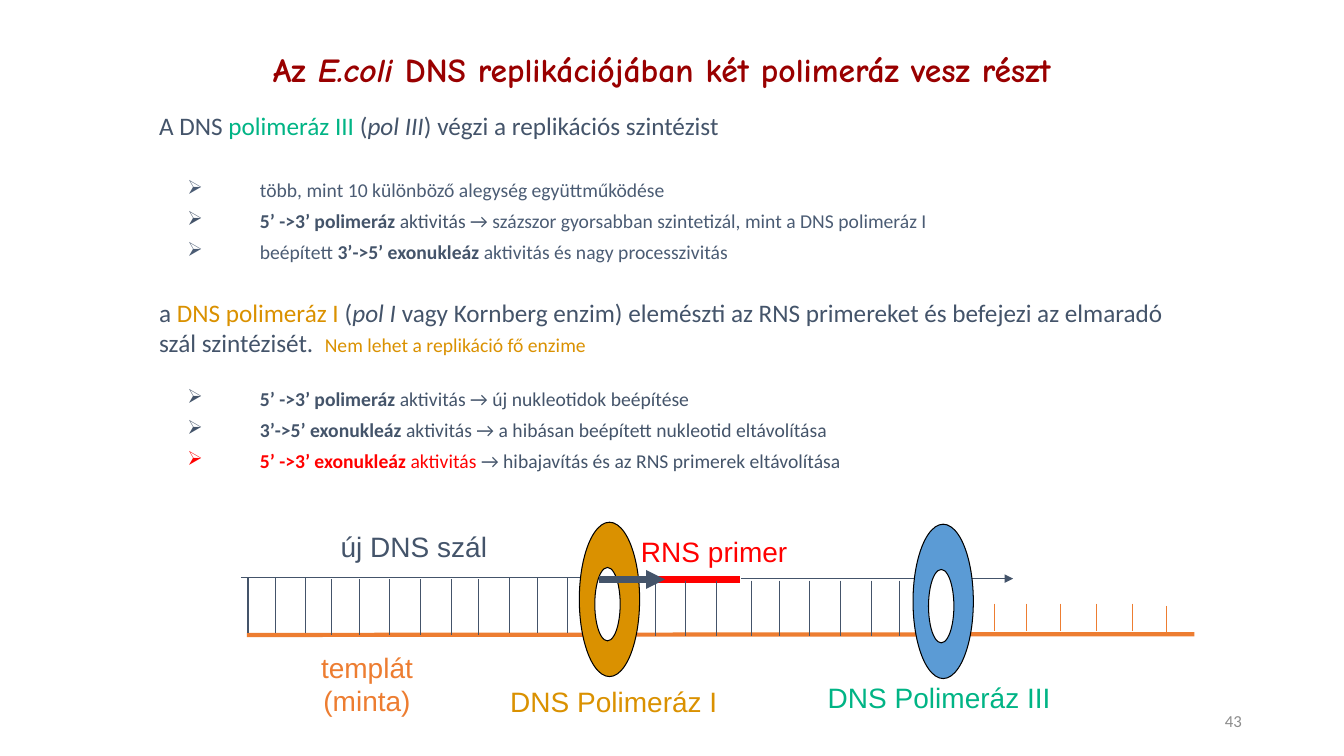
import pptx
import pptx.util
import pptx.dml.color
import pptx.enum.shapes
import pptx.enum.text
import pptx.oxml.ns
from lxml import etree

Cm = pptx.util.Cm
Pt = pptx.util.Pt
ALIGN = pptx.enum.text.PP_ALIGN
ANCHOR = pptx.enum.text.MSO_ANCHOR

COLORS = {
    "slate": "44546A", "steel": "4B5C74", "green": "00B485", "gold": "DA9100",
    "red": "FF0000", "orange": "ED7D31", "blue": "5B9BD5", "maroon": "990000",
    "gray": "8C8C8C", "black": "000000", "white": "FFFFFF",
}

# Content: a run is (text, color, font attributes), a paragraph is (kind, space before, runs)
BOLD, ITALIC = {"bold": True}, {"italic": True}
SMALL = {"size": Pt(14)}
TITLE = [("plain", 0, [
    ("Az ", "maroon", {}),
    ("E.coli", "maroon", ITALIC),
    (" DNS replikációjában két polimeráz vesz részt ", "maroon", {}),
])]
BODY = [
    ("plain", 0, [
        ("A DNS ", "slate", {}),
        ("polimeráz III", "green", {}),
        (" (", "slate", {}),
        ("pol III", "slate", ITALIC),
        (") végzi a replikációs szintézist", "slate", {}),
    ]),
    ("bullet", 22, [("több, mint 10 különböző alegység együttműködése", "steel", {})]),
    ("bullet", 0, [
        ("5’ ->3’ polimeráz ", "slate", BOLD),
        ("aktivitás →", "slate", {}),
        (" százszor gyorsabban szintetizál, mint a DNS polimeráz I", "steel", {}),
    ]),
    ("bullet", 0, [
        ("beépített ", "steel", {}),
        ("3’->5’ exonukleáz ", "slate", BOLD),
        ("aktivitás és nagy processzivitás", "steel", {}),
    ]),
    ("plain", 24, [
        ("a ", "slate", {}),
        ("DNS polimeráz I ", "gold", {}),
        ("(", "slate", {}),
        ("pol I", "slate", ITALIC),
        (" vagy Kornberg enzim) elemészti az RNS primereket és befejezi "
         "az elmaradó szál szintézisét.  ", "slate", {}),
        ("Nem lehet a replikáció fő enzime", "gold", SMALL),
    ]),
    ("bullet", 16, [
        ("5’ ->3’ polimeráz ", "slate", BOLD),
        ("aktivitás → új nukleotidok beépítése", "slate", {}),
    ]),
    ("bullet", 0, [
        ("3’->5’ exonukleáz ", "slate", BOLD),
        ("aktivitás → a hibásan beépített nukleotid eltávolítása", "slate", {}),
    ]),
    ("bullet", 0, [
        ("5’ ->3’ exonukleáz ", "red", BOLD),
        ("aktivitás ", "red", {}),
        ("→ hibajavítás és az RNS primerek eltávolítása", "slate", {}),
    ]),
]
# Diagram labels: lines, color, (left, top, width, height) in cm
LABELS = [
    (["RNS primer"], "red", (15.65, 13.34, 4.7, 1.09)),
    (["DNS Polimeráz III"], "green", (20.37, 17.02, 6.6, 1.12)),
    (["templát", "(minta)"], "orange", (7.65, 16.26, 3.2, 1.96)),
    (["új DNS szál "], "slate", (8.13, 13.23, 4.8, 1.09)),
    (["DNS Polimeráz I"], "gold", (12.37, 17.12, 6.2, 1.12)),
]
# Strands: start, end (cm), color, width (pt), arrowhead
STRANDS = [
    ((6.22, 16.0), (30.1, 15.98), "orange", 3, False),
    ((15.37, 14.6), (18.64, 14.6), "red", 4.5, False),
    ((18.67, 14.58), (25.53, 14.58), "slate", 0.75, True),
    ((6.07, 14.55), (15.19, 14.55), "slate", 0.75, True),
]
PRIMER_REMOVAL = ((15.09, 14.6), (16.76, 14.6), "slate", 4.5, True)
# Base pairs come in blocks: left, top, number of rungs
RUNG_OFFSETS = [0, 0.69, 1.45, 2.24]
RUNG_LENGTH = 1.4
RUNG_BLOCKS = [
    (6.25, 14.55, 3), (8.36, 14.6, 4), (11.38, 14.6, 2), (12.85, 14.55, 4),
    (15.82, 14.63, 4), (18.95, 14.63, 4), (21.97, 14.63, 4),
]
FREE_BASES = [(25.07, 15.21), (25.88, 15.21), (26.72, 15.21),
              (27.64, 15.21), (28.55, 15.21), (29.39, 15.27)]
FREE_BASE_LENGTH = 0.68
POLYMERASES = [(23.01, 13.21, "blue"), (14.6, 13.16, "gold")]
RING_SIZE, HOLE_SIZE, HOLE_OFFSET = (1.52, 3.89), (0.64, 1.85), (0.39, 1.14)

presentation = pptx.Presentation()
presentation.slide_width, presentation.slide_height = Cm(33.87), Cm(19.05)
slide = presentation.slides.add_slide(presentation.slide_layouts[6])


def rgb(name):
    return pptx.dml.color.RGBColor.from_string(COLORS[name])


def add_bullet(paragraph):
    paragraph.level = 1
    paragraph.line_spacing = Pt(22)
    properties = paragraph._p.get_or_add_pPr()
    properties.set("marL", str(Cm(2.54)))
    properties.set("indent", str(Cm(-1.83)))
    etree.SubElement(properties, pptx.oxml.ns.qn("a:buChar")).set("char", "➢")


def add_text(box, paragraphs, font_values, alignment=ALIGN.LEFT, wrap=False, anchor=ANCHOR.TOP):
    frame = slide.shapes.add_textbox(*map(Cm, box)).text_frame
    frame.word_wrap = wrap
    frame.vertical_anchor = anchor
    for index, (kind, space_before, runs) in enumerate(paragraphs):
        paragraph = frame.add_paragraph() if index else frame.paragraphs[0]
        paragraph.alignment = alignment
        paragraph.space_before = Pt(space_before)
        if kind == "bullet":
            add_bullet(paragraph)
        for text, color, run_values in runs:
            run = paragraph.add_run()
            run.text = text
            size_values = SMALL if kind == "bullet" else {}
            for name, value in {**font_values, **size_values, **run_values}.items():
                setattr(run.font, name, value)
            run.font.color.rgb = rgb(color)


def add_line(start, end, color, width=0.75, arrow=False):
    connector = slide.shapes.add_connector(
        pptx.enum.shapes.MSO_CONNECTOR.STRAIGHT, *map(Cm, start + end))
    connector.line.color.rgb = rgb(color)
    connector.line.width = Pt(width)
    if arrow:
        line = connector.line._get_or_add_ln()
        etree.SubElement(line, pptx.oxml.ns.qn("a:tailEnd")).set("type", "triangle")
    etree.SubElement(connector._element.spPr, pptx.oxml.ns.qn("a:effectLst"))


def add_ellipse(group, position, size, color):
    shape = group.shapes.add_shape(
        pptx.enum.shapes.MSO_SHAPE.OVAL, *map(Cm, position + size))
    shape.shadow.inherit = False
    shape.fill.solid()
    shape.fill.fore_color.rgb = rgb(color)
    shape.line.color.rgb = rgb("black")
    shape.line.width = Pt(0.75)


# Strands and base pairs
for strand in STRANDS:
    add_line(*strand)
for left, top, count in RUNG_BLOCKS:
    for offset in RUNG_OFFSETS[:count]:
        add_line((left + offset, top), (left + offset, top + RUNG_LENGTH), "slate")
for left, top in FREE_BASES:
    add_line((left, top), (left, top + FREE_BASE_LENGTH), "orange")

# Polymerase rings
for left, top, color in POLYMERASES:
    ring = slide.shapes.add_group_shape()
    add_ellipse(ring, (left, top), RING_SIZE, color)
    add_ellipse(ring, (left + HOLE_OFFSET[0], top + HOLE_OFFSET[1]), HOLE_SIZE, "white")
add_line(*PRIMER_REMOVAL)

# Diagram labels
for lines, color, box in LABELS:
    add_text(box, [("plain", 0, [(line, color, {})]) for line in lines],
             {"name": "Arial", "size": Pt(20)}, ALIGN.CENTER)

# Title, body and slide number
add_text((4.83, 1.12, 24, 1.27), TITLE,
         {"name": "Comic Neue", "size": Pt(24), "bold": True}, ALIGN.CENTER)
add_text((3.76, 2.65, 26.06, 10.46), BODY, {"name": "Calibri", "size": Pt(18)}, wrap=True)
add_text((23.93, 17.65, 7.62, 1.02), [("plain", 0, [("43", "gray", {})])],
         {"name": "Calibri", "size": Pt(12)}, ALIGN.RIGHT, True, ANCHOR.MIDDLE)

presentation.save("out.pptx")
